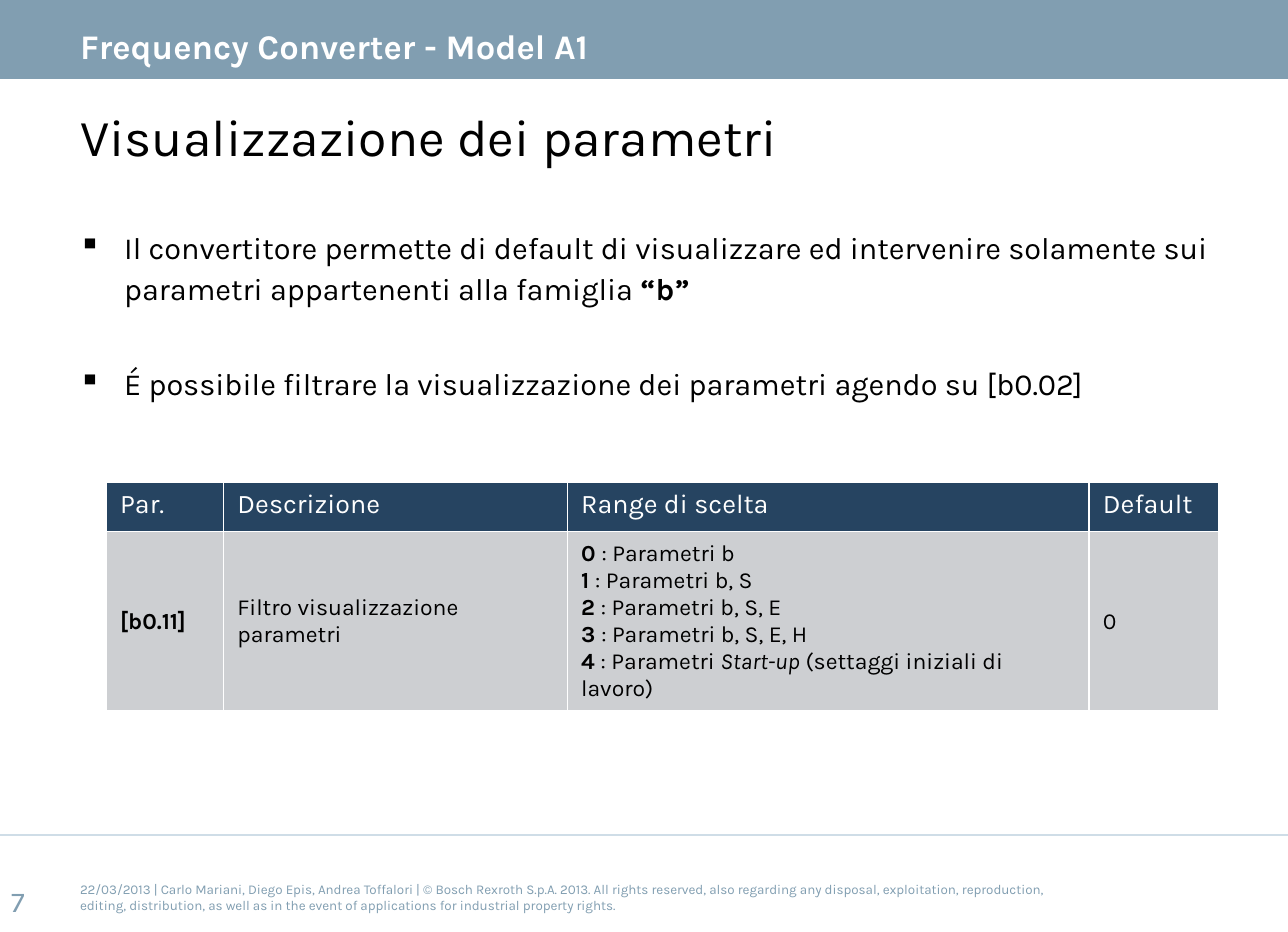
from lxml import etree
from pptx import Presentation
from pptx.dml.color import RGBColor
from pptx.enum.shapes import MSO_CONNECTOR as CONNECTOR, MSO_SHAPE as SHAPE
from pptx.enum.text import MSO_ANCHOR as ANCHOR
from pptx.oxml.ns import qn
from pptx.util import Inches, Pt

FONT = "Karla"
STEEL, PALE, NAVY, GREY = "819EB1", "CFDDE7", "264461", "CDCFD2"
BLACK, WHITE = "000000", "FFFFFF"
WIDTH, HEIGHT = 9.33, 6.75
MARGIN = 0.58

HEADERS = ["Par.", "Descrizione", "Range di scelta", "Default"]
COLUMN_WIDTHS = [0.85, 2.49, 3.78, 0.94]
ROW_HEIGHTS = [0.36, 1.27]
CHOICES = [
    [("0 ", "b"), (": Parametri b", "")],
    [("1 ", "b"), (": Parametri b, S", "")],
    [("2 ", "b"), (": Parametri b, S, E", "")],
    [("3 ", "b"), (": Parametri b, S, E, H", "")],
    [("4 ", "b"), (": Parametri ", ""), ("Start-up", "i"),
     (" (settaggi iniziali di lavoro)", "")],
]
VALUES = [
    [[("[b0.11]", "b")]],
    [[("Filtro visualizzazione parametri", "")]],
    CHOICES,
    [[("0", "")]],
]
BULLETS = [
    [("Il convertitore permette di default di visualizzare ed intervenire "
      "solamente sui parametri appartenenti alla famiglia ", ""), ("“b”", "b")],
    [("É possibile filtrare la visualizzazione dei parametri agendo su [b0.02]", "")],
]
FOOTER = (
    "22/03/2013 | Carlo Mariani, Diego Epis, Andrea Toffalori | "
    "© Bosch Rexroth S.p.A. 2013. All rights reserved, also regarding any "
    "disposal, exploitation, reproduction, editing, distribution, as well as "
    "in the event of applications for industrial property rights."
)


def color(value):
    return RGBColor.from_string(value)


def style(para, size, ink, bold=None):
    para.font.name = FONT
    para.font.size = Pt(size)
    para.font.color.rgb = color(ink)
    para.font.bold = bold


def add_spans(para, spans):
    for text, mark in spans:
        span = para.add_run()
        span.text = text
        if mark == "b":
            span.font.bold = True
        elif mark == "i":
            span.font.italic = True


def add_frame(page, box, top_inset=0, anchor=ANCHOR.TOP):
    frame = page.shapes.add_textbox(*map(Inches, box)).text_frame
    frame.word_wrap = True
    frame.vertical_anchor = anchor
    frame.margin_left = frame.margin_right = frame.margin_bottom = 0
    frame.margin_top = Inches(top_inset)
    return frame


def add_text(page, box, text, size, ink, top_inset=0, anchor=ANCHOR.TOP,
             bold=None, line_spacing=None):
    para = add_frame(page, box, top_inset, anchor).paragraphs[0]
    para.line_spacing = line_spacing
    style(para, size, ink, bold)
    add_spans(para, [(text, "")])


def add_rule(page, y, ink):
    rule = page.shapes.add_connector(
        CONNECTOR.STRAIGHT, Inches(0), Inches(y), Inches(WIDTH), Inches(y))
    rule.line.color.rgb = color(ink)
    rule.line.width = Pt(1)
    etree.SubElement(rule._element.spPr, qn("a:effectLst"))


def add_banner(page, box):
    left, top, width, height = box
    band = page.shapes.add_shape(SHAPE.RECTANGLE, *map(Inches, box))
    band.shadow.inherit = False
    band.fill.solid()
    band.fill.fore_color.rgb = color(STEEL)
    band.line.fill.background()
    add_rule(page, top + height, WHITE)
    add_text(page, (left + MARGIN, top, 8, height - 0.01),
             "Frequency Converter - Model A1", 18, WHITE, 0.06,
             ANCHOR.MIDDLE, True, 1.11)


def add_bullets(page, box):
    frame = add_frame(page, box, 0.07)
    for index, spans in enumerate(BULLETS):
        para = frame.add_paragraph() if index else frame.paragraphs[0]
        para.line_spacing = 1.11
        if index:
            para.space_before = Pt(28)
        props = para._p.get_or_add_pPr()
        props.set("marL", str(Inches(0.33)))
        props.set("indent", str(-Inches(0.33)))
        etree.SubElement(props, qn("a:buChar"), char="▪")
        style(para, 16, BLACK)
        add_spans(para, spans)


def paint_cell(cell, fill):
    props = cell._tc.get_or_add_tcPr()
    for side in ("lnL", "lnR", "lnT", "lnB"):
        border = etree.SubElement(props, qn(f"a:{side}"), w=str(Pt(1)))
        paint = etree.SubElement(border, qn("a:solidFill"))
        etree.SubElement(paint, qn("a:srgbClr"), val=WHITE)
    cell.fill.solid()
    cell.fill.fore_color.rgb = color(fill)


def fill_cell(cell, lines, size, ink, fill, anchor):
    paint_cell(cell, fill)
    cell.vertical_anchor = anchor
    for index, spans in enumerate(lines):
        frame = cell.text_frame
        para = frame.add_paragraph() if index else frame.paragraphs[0]
        style(para, size, ink, False)
        add_spans(para, spans)


def add_parameters(page, box):
    table = page.shapes.add_table(
        len(ROW_HEIGHTS), len(COLUMN_WIDTHS), *map(Inches, box)).table
    for row, height in zip(table.rows, ROW_HEIGHTS):
        row.height = Inches(height)
    for index, width in enumerate(COLUMN_WIDTHS):
        table.columns[index].width = Inches(width)
        fill_cell(table.cell(0, index), [[(HEADERS[index], "")]],
                  14, WHITE, NAVY, ANCHOR.TOP)
        fill_cell(table.cell(1, index), VALUES[index],
                  12, BLACK, GREY, ANCHOR.MIDDLE)


def add_footer(page, box):
    left, top, width, height = box
    add_rule(page, top, PALE)
    add_text(page, (left + MARGIN, top + 0.29, 7, 0.32), FOOTER, 7, STEEL,
             anchor=ANCHOR.MIDDLE)
    add_text(page, (left + 0.08, top + 0.35, 0.42, 0.21), "7", 15, STEEL)


def main():
    deck = Presentation()
    deck.slide_width, deck.slide_height = Inches(WIDTH), Inches(HEIGHT)
    page = deck.slides.add_slide(deck.slide_layouts[6])
    add_banner(page, (0, 0, WIDTH, 0.58))
    add_text(page, (MARGIN, 0.7, 8, 0.51), "Visualizzazione dei parametri",
             27, BLACK, 0.01, line_spacing=1.11)
    add_bullets(page, (0.57, 1.56, 8.62, 1.61))
    add_parameters(page, (0.77, 3.49, sum(COLUMN_WIDTHS), sum(ROW_HEIGHTS)))
    add_footer(page, (0, 6.05, WIDTH, 0.7))
    deck.save("out.pptx")


if __name__ == "__main__":
    main()
